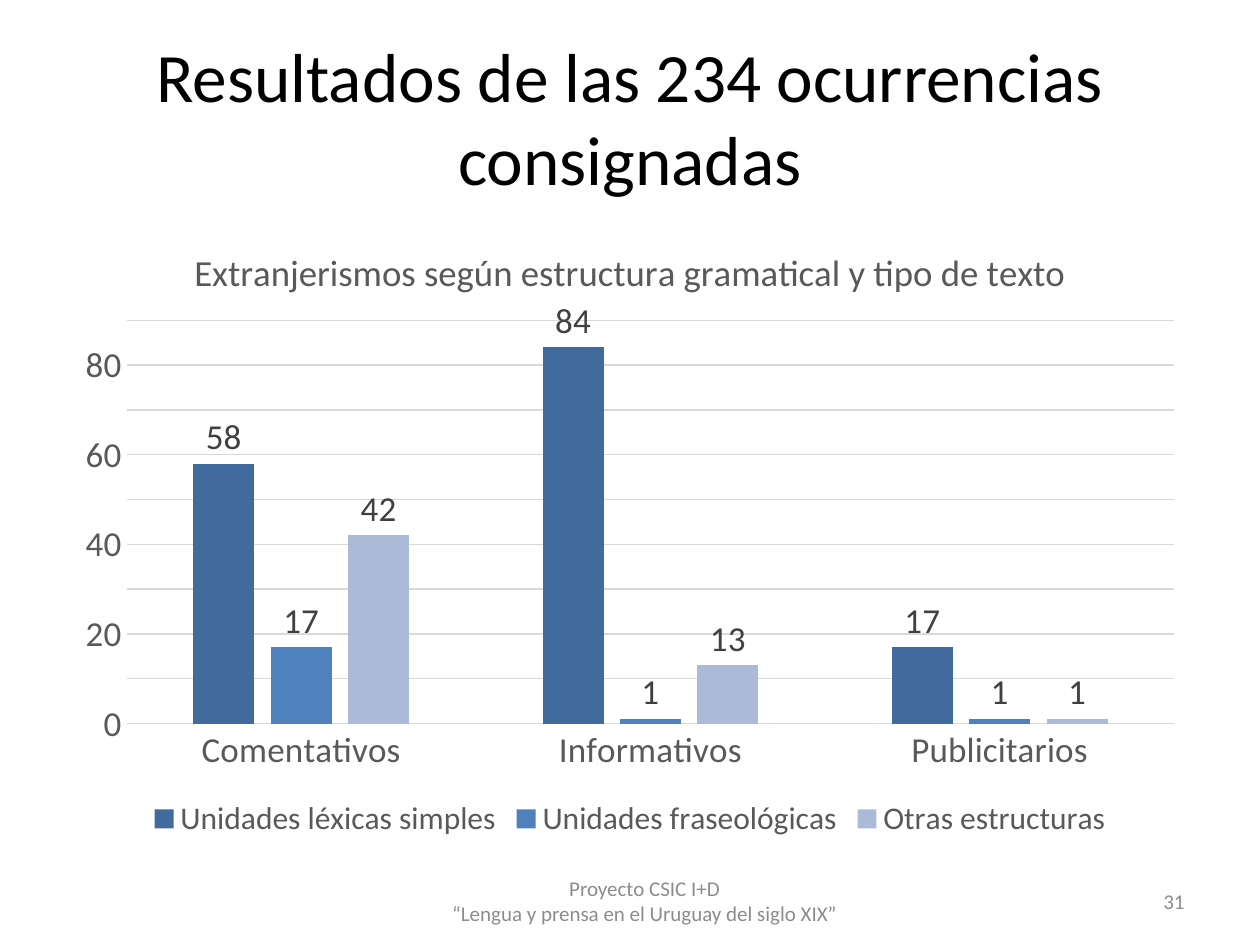
from pptx import Presentation
from pptx.chart.data import CategoryChartData
from pptx.dml.color import RGBColor
from pptx.enum.chart import XL_CHART_TYPE, XL_LABEL_POSITION, XL_LEGEND_POSITION, XL_TICK_MARK
from pptx.enum.text import MSO_ANCHOR, PP_ALIGN
from pptx.util import Cm, Pt

COLUMNS = XL_CHART_TYPE.COLUMN_CLUSTERED
OUTSIDE_END = XL_LABEL_POSITION.OUTSIDE_END
BOTTOM = XL_LEGEND_POSITION.BOTTOM
NO_TICK = XL_TICK_MARK.NONE
MIDDLE = MSO_ANCHOR.MIDDLE
CENTER, RIGHT = PP_ALIGN.CENTER, PP_ALIGN.RIGHT

COLORS = {"title": "000000", "axis": "595959", "grid": "D9D9D9",
          "label": "404040", "footer": "8C8C8C"}
FONT = "Calibri"
CATEGORIES = ["Comentativos", "Informativos", "Publicitarios"]
SERIES = [
    ("Unidades léxicas simples", (58, 84, 17), "426B9D"),
    ("Unidades fraseológicas", (17, 1, 1), "4F81BD"),
    ("Otras estructuras", (42, 13, 1), "AABAD7"),
]
FOOTERS = [
    (18.21, 5.92, RIGHT, "31"),
    (8.69, 8.61, CENTER, "Proyecto CSIC I+D\v“Lengua y prensa en el Uruguay del siglo XIX”"),
]


def set_font(font, size, color):
    values = {"name": FONT, "size": Pt(size), "bold": False}
    for name, value in values.items():
        setattr(font, name, value)
    font.color.rgb = RGBColor.from_string(COLORS[color])


def set_line(line):
    line.width = Pt(0.75)
    line.color.rgb = RGBColor.from_string(COLORS["grid"])


prs = Presentation()
prs.slide_width, prs.slide_height = Cm(25.4), Cm(19.05)
s = prs.slides.add_slide(prs.slide_layouts[5])

# Title
title = s.shapes.title
place = {"left": Cm(1.27), "top": Cm(0.76), "width": Cm(22.86), "height": Cm(3.18)}
for name, value in place.items():
    setattr(title, name, value)
tf = title.text_frame
tf.text = "Resultados de las 234 ocurrencias consignadas"
tf.vertical_anchor = MIDDLE
p = tf.paragraphs[0]
p.alignment = CENTER
set_font(p.runs[0].font, 39.6, "title")

# Chart
data = CategoryChartData()
data.categories = CATEGORIES
for name, values, _ in SERIES:
    data.add_series(name, values)
chart = s.shapes.add_chart(COLUMNS, Cm(1.27), Cm(4.45), Cm(22.86), Cm(12.57), data).chart
set_font(chart.font, 20, "title")

chart.has_title = True
tf = chart.chart_title.text_frame
tf.text = "Extranjerismos según estructura gramatical y tipo de texto"
set_font(tf.paragraphs[0].runs[0].font, 21, "axis")
chart.chart_title.include_in_layout = False

chart.has_legend = True
chart.legend.position = BOTTOM
chart.legend.include_in_layout = False
set_font(chart.legend.font, 18, "axis")

for axis in (chart.category_axis, chart.value_axis):
    axis.major_tick_mark = axis.minor_tick_mark = NO_TICK
    set_font(axis.tick_labels.font, 20, "axis")
set_line(chart.category_axis.format.line)

scale = {"minimum_scale": 0, "maximum_scale": 90, "major_unit": 10}
for name, value in scale.items():
    setattr(chart.value_axis, name, value)
chart.value_axis.format.line.fill.background()
set_line(chart.value_axis.major_gridlines.format.line)

plot = chart.plots[0]
plot.gap_width, plot.overlap = 219, -27
plot.vary_by_categories = False
for series, (_, _, color) in zip(plot.series, SERIES):
    series.format.fill.solid()
    series.format.fill.fore_color.rgb = RGBColor.from_string(color)
    labels = series.data_labels
    labels.show_value = True
    labels.position = OUTSIDE_END
    set_font(labels.font, 20, "label")

# Slide number and footer
for left, width, align, text in FOOTERS:
    tf = s.shapes.add_textbox(Cm(left), Cm(17.65), Cm(width), Cm(1.02)).text_frame
    tf.word_wrap = True
    tf.vertical_anchor = MIDDLE
    p = tf.paragraphs[0]
    p.text = text
    p.alignment = align
    for r in p.runs:
        set_font(r.font, 12, "footer")

prs.save("out.pptx")
